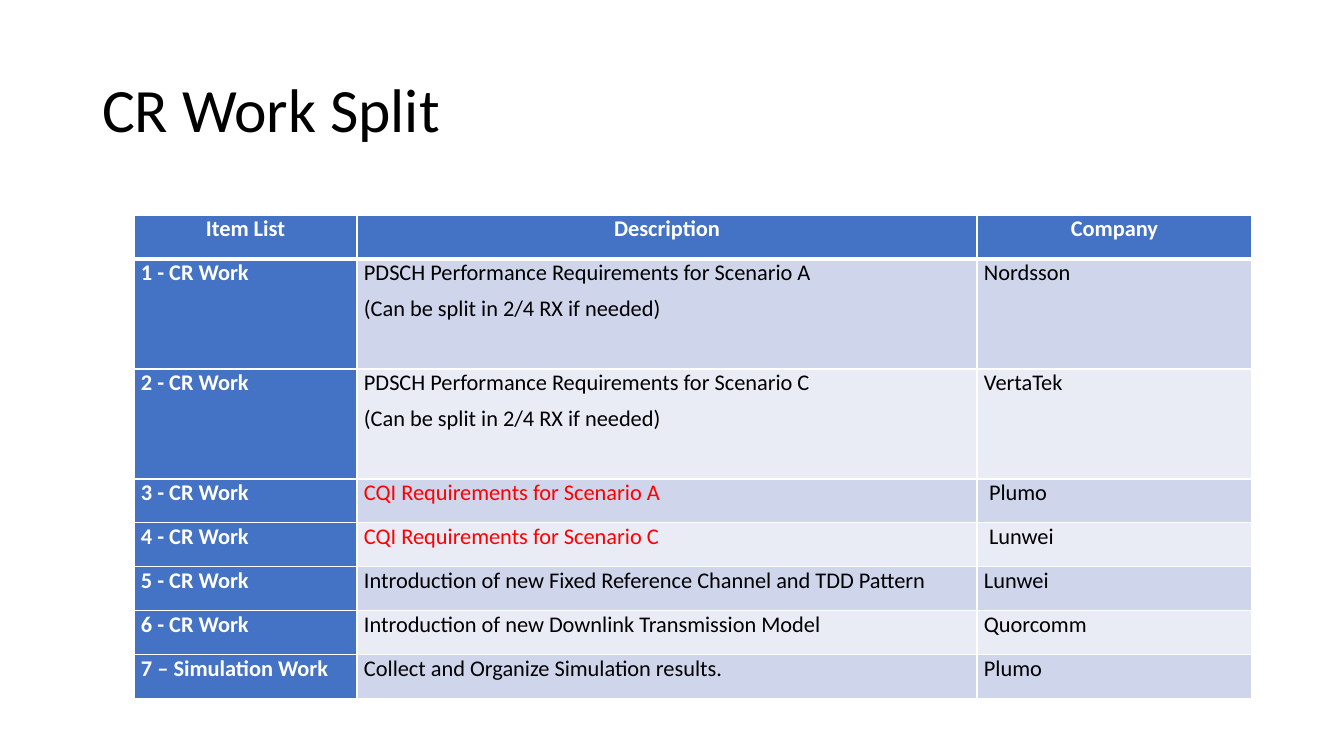
import pptx
import pptx.util
import pptx.dml.color
import pptx.enum.text
import pptx.oxml
import pptx.oxml.ns

RGB = pptx.dml.color.RGBColor
WHITE = RGB(0xFF, 0xFF, 0xFF)
BLACK = RGB(0, 0, 0)
RED = RGB(0xFF, 0, 0)
BLUE = RGB(0x44, 0x72, 0xC4)
BANDS = (RGB(0xCF, 0xD5, 0xEA), RGB(0xE9, 0xEB, 0xF5))
FONT = "Calibri"

TITLE = "CR Work Split"
HEAD = ("Item List", "Description", "Company")
ITEMS = [
    ("1 - CR Work", "PDSCH Performance Requirements for Scenario A\n(Can be split in 2/4 RX if needed)", "Nordsson"),
    ("2 - CR Work", "PDSCH Performance Requirements for Scenario C\n(Can be split in 2/4 RX if needed)", "VertaTek"),
    ("3 - CR Work", "CQI Requirements for Scenario A", " Plumo"),
    ("4 - CR Work", "CQI Requirements for Scenario C", " Lunwei"),
    ("5 - CR Work", "Introduction of new Fixed Reference Channel and TDD Pattern", "Lunwei"),
    ("6 - CR Work", "Introduction of new Downlink Transmission Model", "Quorcomm"),
    ("7 – Simulation Work", "Collect and Organize Simulation results.", "Plumo"),
]
COLS = (223, 620, 275)
ROW, TALL = 44, 110
LEFT, TOP = 134, 215
SCALE = 914400 / 100.8


def px(n):
    """Turn px into EMU."""
    return pptx.util.Emu(round(n * SCALE))


def style(para, size, color, bold=False):
    """Format the runs of a paragraph."""
    for run in para.runs:
        font = run.font
        font.name, font.size, font.bold = FONT, pptx.util.Pt(size), bold
        font.color.rgb = color


def edge(cell, side, width):
    """Add a white border to one side of a cell."""
    ns = pptx.oxml.ns.nsdecls("a")
    cell._tc.get_or_add_tcPr().append(pptx.oxml.parse_xml(
        f'<a:ln{side} {ns} w="{width * 12700}"><a:solidFill>'
        f'<a:srgbClr val="{WHITE}"/></a:solidFill></a:ln{side}>'))


def fill(cell, text, row, col):
    """Write and format one table cell."""
    dark = row == 0 or col == 0
    cell.margin_left = cell.margin_right = px(7)
    cell.margin_top = cell.margin_bottom = 0
    for side in "LRTB":
        thick = (row, side) in ((0, "B"), (1, "T"))
        edge(cell, side, 3 if thick else 1)
    cell.fill.solid()
    cell.fill.fore_color.rgb = BLUE if dark else BANDS[(row - 1) % 2]
    cell.text_frame.text = text
    color = WHITE if dark else RED if text.startswith("CQI") else BLACK
    align = pptx.enum.text.PP_ALIGN
    for para in cell.text_frame.paragraphs:
        para.alignment = align.LEFT if row else align.CENTER
        para.space_after = pptx.util.Pt(6)
        style(para, 16, color, dark)


def main():
    """Build the work split slide."""
    deck = pptx.Presentation()
    deck.slide_width, deck.slide_height = px(1344), px(756)
    slide = deck.slides.add_slide(deck.slide_layouts[5])

    title = slide.shapes.title
    title.left, title.top, title.width, title.height = map(px, (92, 40, 1159, 146))
    frame = title.text_frame
    frame.text = TITLE
    frame.auto_size = pptx.enum.text.MSO_AUTO_SIZE.NONE
    frame.vertical_anchor = pptx.enum.text.MSO_ANCHOR.MIDDLE
    para = frame.paragraphs[0]
    para.alignment = pptx.enum.text.PP_ALIGN.LEFT
    para.line_spacing = 0.9
    style(para, 44, BLACK)

    rows = [HEAD] + ITEMS
    highs = [TALL if "\n" in row[1] else ROW for row in rows]
    table = slide.shapes.add_table(
        len(rows), len(COLS), px(LEFT), px(TOP), px(sum(COLS)), px(sum(highs))).table
    table.first_col = True
    for col, width in zip(table.columns, COLS):
        col.width = px(width)
    for r, row in enumerate(rows):
        table.rows[r].height = px(highs[r])
        for c, text in enumerate(row):
            fill(table.cell(r, c), text, r, c)

    deck.save("out.pptx")


if __name__ == "__main__":
    main()
